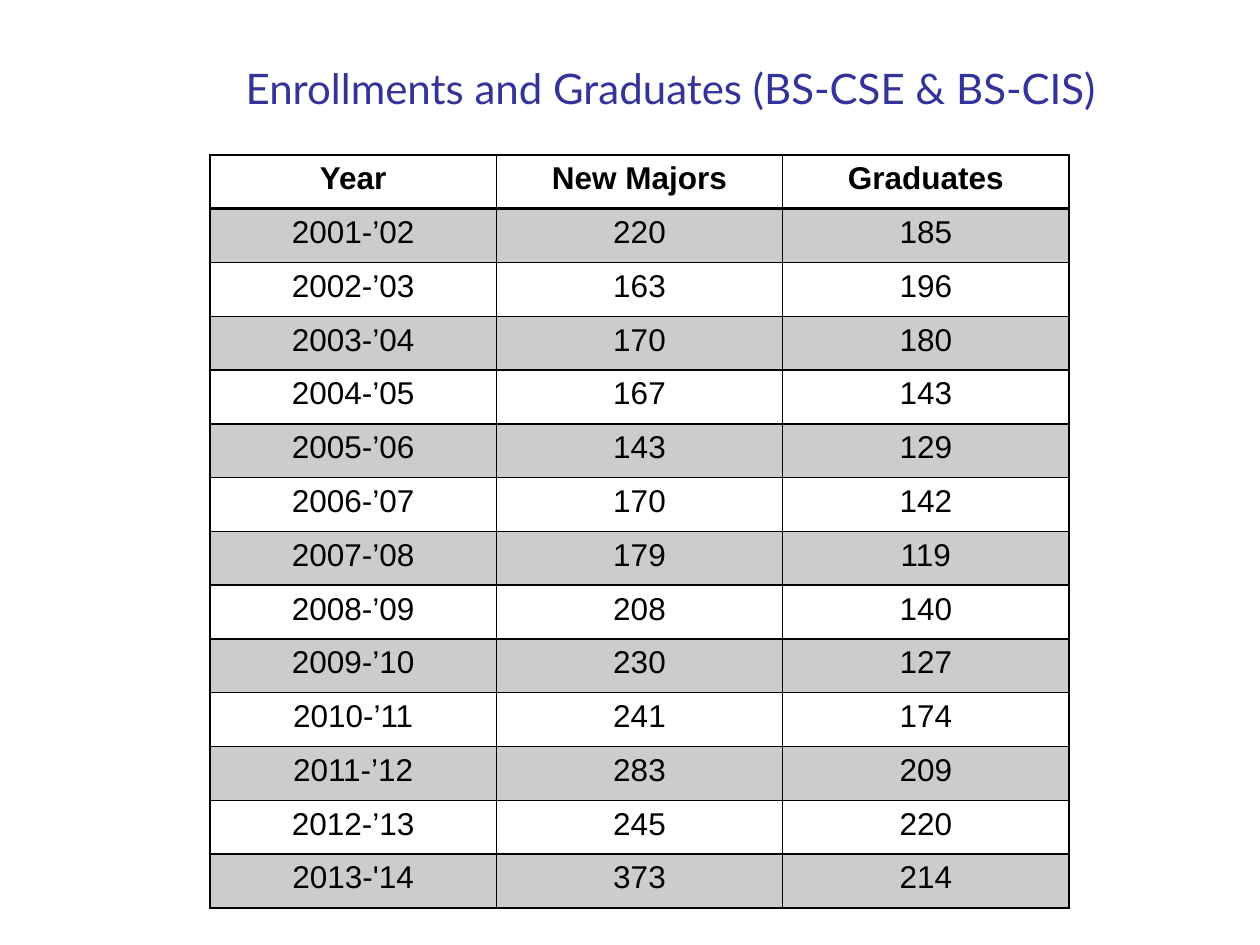
from dataclasses import dataclass

import pptx
import pptx.dml.color
import pptx.enum.text
import pptx.oxml
import pptx.oxml.ns
import pptx.util
from lxml import etree

EMU_PER_PX = 914400 / 126


def px(n):
    return pptx.util.Emu(round(n * EMU_PER_PX))


@dataclass(frozen=True)
class Theme:
    title_font: str = "Lato"
    body_font: str = "Arial"
    title_size: int = 24
    body_size: int = 18
    title_color: str = "333399"
    ink: str = "000000"
    band_alpha: int = 20
    rule: int = 1
    header_rule: int = 2


class Deck:
    """Holds the theme and the current slide."""

    def __init__(self, theme, width, height):
        self.theme = theme
        self.prs = pptx.Presentation()
        self.prs.slide_width, self.prs.slide_height = px(width), px(height)
        self.s = self.prs.slides.add_slide(self.prs.slide_layouts[5])

    def style(self, p, font, size, color, align, bold=False):
        p.alignment = align
        for r in p.runs:
            r.font.name = font
            r.font.size = pptx.util.Pt(size)
            r.font.bold = bold
            r.font.color.rgb = pptx.dml.color.RGBColor.from_string(color)

    def title(self, text, x, y, w, h):
        sp, t = self.s.shapes.title, self.theme
        sp.left, sp.top, sp.width, sp.height = px(x), px(y), px(w), px(h)
        tf = sp.text_frame
        tf.text = text
        tf.word_wrap = True
        tf.auto_size = pptx.enum.text.MSO_AUTO_SIZE.NONE
        tf.vertical_anchor = pptx.enum.text.MSO_ANCHOR.BOTTOM
        self.style(tf.paragraphs[0], t.title_font, t.title_size, t.title_color,
                   pptx.enum.text.PP_ALIGN.LEFT)

    def table(self, rows, x, y, w, h):
        t = self.theme
        frame = self.s.shapes.add_table(len(rows), len(rows[0]),
                                        px(x), px(y), px(w), px(h))
        tbl = frame.table
        tbl.first_row = tbl.horz_banding = False
        for i, row in enumerate(rows):
            for j, value in enumerate(row):
                cell = tbl.cell(i, j)
                cell.text = str(value)
                self.style(cell.text_frame.paragraphs[0], t.body_font,
                           t.body_size, t.ink,
                           pptx.enum.text.PP_ALIGN.CENTER, bold=i == 0)
                self.fill(cell, banded=i % 2 == 1)
                self.borders(cell, top=t.header_rule if i == 1 else t.rule,
                             bottom=t.header_rule if i == 0 else t.rule)

    def fill(self, cell, banded):
        if not banded:
            cell.fill.background()
            return
        cell.fill.solid()
        cell.fill.fore_color.rgb = pptx.dml.color.RGBColor.from_string(self.theme.ink)
        qn = pptx.oxml.ns.qn
        color = cell._tc.tcPr.find(qn("a:solidFill")).find(qn("a:srgbClr"))
        etree.SubElement(color, qn("a:alpha"), val=str(self.theme.band_alpha * 1000))

    def borders(self, cell, top, bottom):
        """Put the border lines ahead of the fill, as the schema asks."""
        rule = self.theme.rule
        sides = (("L", rule), ("R", rule), ("T", top), ("B", bottom))
        for k, (side, width) in enumerate(sides):
            ln = pptx.oxml.parse_xml(
                f'<a:ln{side} {pptx.oxml.ns.nsdecls("a")} w="{pptx.util.Pt(width)}">'
                f'<a:solidFill><a:srgbClr val="{self.theme.ink}"/></a:solidFill>'
                f'</a:ln{side}>')
            cell._tc.tcPr.insert(k, ln)


ROWS = [
    ("Year", "New Majors", "Graduates"),
    ("2001-’02", 220, 185),
    ("2002-’03", 163, 196),
    ("2003-’04", 170, 180),
    ("2004-’05", 167, 143),
    ("2005-’06", 143, 129),
    ("2006-’07", 170, 142),
    ("2007-’08", 179, 119),
    ("2008-’09", 208, 140),
    ("2009-’10", 230, 127),
    ("2010-’11", 241, 174),
    ("2011-’12", 283, 209),
    ("2012-’13", 245, 220),
    ("2013-'14", 373, 214),
]


def main():
    deck = Deck(Theme(), 1260, 945)
    deck.title("Enrollments and Graduates (BS-CSE & BS-CIS)", 233, 18, 900, 101)
    deck.table(ROWS, 210, 155, 859, 753)
    deck.prs.save("out.pptx")


if __name__ == "__main__":
    main()
